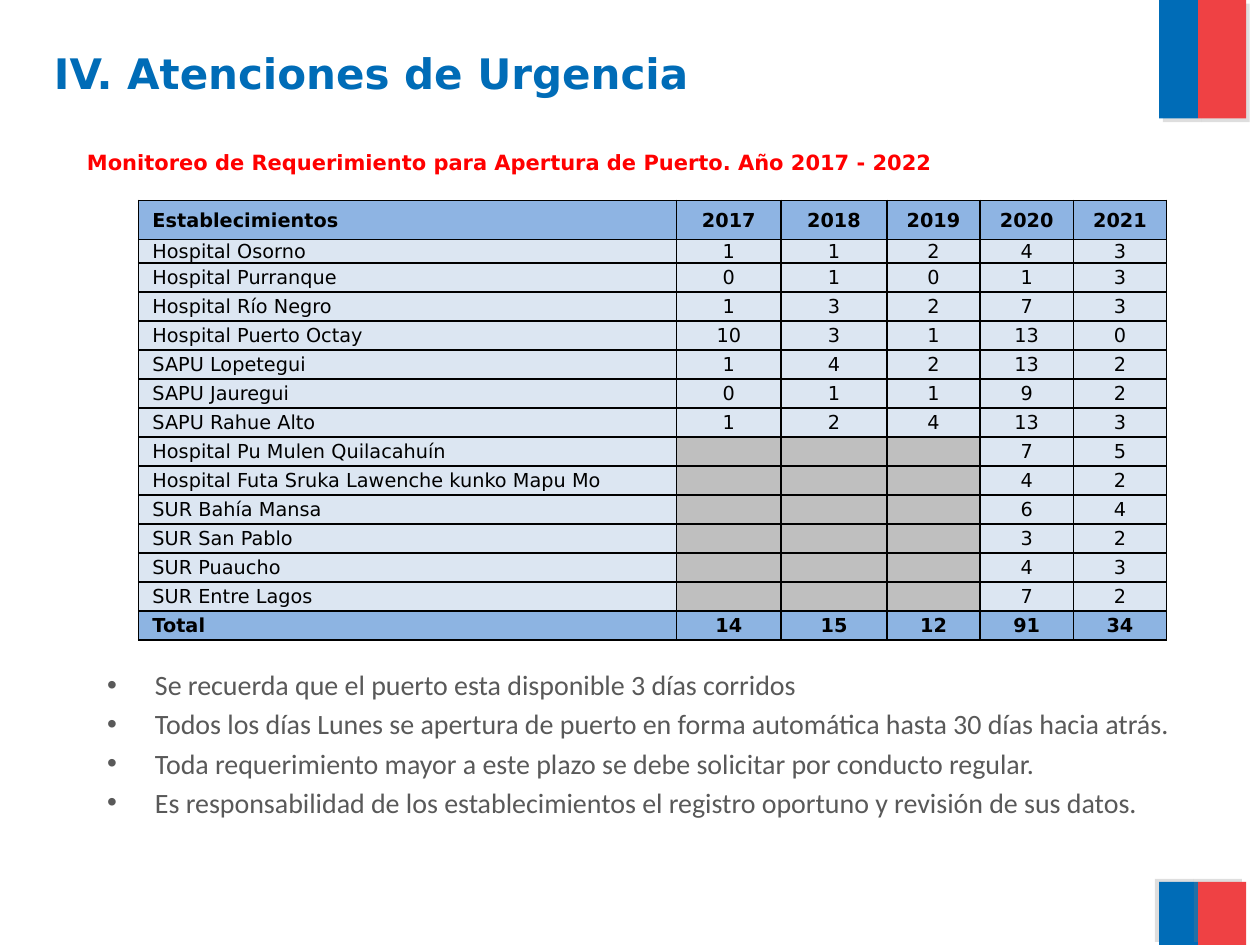
from lxml import etree
from pptx import Presentation
from pptx.dml.color import RGBColor
from pptx.enum.shapes import MSO_SHAPE
from pptx.enum.text import MSO_ANCHOR, PP_ALIGN
from pptx.oxml import parse_xml
from pptx.oxml.ns import nsdecls, qn
from pptx.util import Inches, Pt

RECTANGLE = MSO_SHAPE.RECTANGLE
TOP, MIDDLE = MSO_ANCHOR.TOP, MSO_ANCHOR.MIDDLE
LEFT, CENTER = PP_ALIGN.LEFT, PP_ALIGN.CENTER

BLUE = RGBColor(0x00, 0x6C, 0xB7)
FLAG_RED = RGBColor(0xEF, 0x41, 0x44)
TITLE_RED = RGBColor(0xFF, 0x00, 0x00)
BLACK = RGBColor(0x00, 0x00, 0x00)
TEXT_GRAY = RGBColor(0x59, 0x59, 0x59)
HEADER_BLUE = RGBColor(0x8E, 0xB4, 0xE3)
TOTAL_BLUE = RGBColor(0x8D, 0xB4, 0xE2)
ROW_BLUE = RGBColor(0xDC, 0xE6, 0xF2)
NO_DATA_GRAY = RGBColor(0xBF, 0xBF, 0xBF)

TABLE_FONT = "DejaVu Sans"
BODY_FONT = "Calibri"

COLUMN_WIDTHS = (4.27, 0.83, 0.84, 0.74, 0.74, 0.74)
HEADER_HEIGHT, FIRST_ROW_HEIGHT, ROW_HEIGHT = 0.31, 0.16, 0.23
ROWS = (
    ("Establecimientos", "2017", "2018", "2019", "2020", "2021"),
    ("Hospital Osorno", "1", "1", "2", "4", "3"),
    ("Hospital Purranque", "0", "1", "0", "1", "3"),
    ("Hospital Río Negro", "1", "3", "2", "7", "3"),
    ("Hospital Puerto Octay", "10", "3", "1", "13", "0"),
    ("SAPU Lopetegui", "1", "4", "2", "13", "2"),
    ("SAPU Jauregui", "0", "1", "1", "9", "2"),
    ("SAPU Rahue Alto", "1", "2", "4", "13", "3"),
    ("Hospital Pu Mulen Quilacahuín", "", "", "", "7", "5"),
    ("Hospital Futa Sruka Lawenche kunko Mapu Mo", "", "", "", "4", "2"),
    ("SUR Bahía Mansa", "", "", "", "6", "4"),
    ("SUR San Pablo", "", "", "", "3", "2"),
    ("SUR Puaucho", "", "", "", "4", "3"),
    ("SUR Entre Lagos", "", "", "", "7", "2"),
    ("Total", "14", "15", "12", "91", "34"),
)
REMINDERS = (
    "Se recuerda que el puerto esta disponible 3 días corridos",
    "Todos los días Lunes se apertura de puerto en forma automática hasta 30 días hacia atrás.",
    "Toda requerimiento mayor a este plazo se debe solicitar por conducto regular.",
    "Es responsabilidad de los establecimientos el registro oportuno y revisión de sus datos.",
)


def place(shape, left, top, width, height):
    """Move and size a shape, in inches."""
    shape.left, shape.top = Inches(left), Inches(top)
    shape.width, shape.height = Inches(width), Inches(height)


def format_paragraph(paragraph, name, size, color, bold=False, alignment=LEFT):
    """Set the font and alignment of a paragraph."""
    font = paragraph.font
    font.name, font.size, font.bold = name, Pt(size), bold
    font.color.rgb = color
    paragraph.alignment = alignment


def add_shadow(shape, direction):
    """Give a shape a soft gray shadow towards a direction in degrees."""
    shape.shadow.inherit = False
    effects = shape._element.spPr.find(qn("a:effectLst"))
    effects.append(parse_xml(
        f'<a:outerShdw {nsdecls("a")} blurRad="0" dist="{Pt(3)}" dir="{direction * 60000}">'
        '<a:srgbClr val="808080"><a:alpha val="25000"/></a:srgbClr></a:outerShdw>'))


def add_flag(slide, left, top, height, shadow_direction):
    """Draw the blue and red flag band."""
    for offset, width, color in ((0, 0.31, BLUE), (0.31, 0.38, FLAG_RED)):
        stripe = slide.shapes.add_shape(
            RECTANGLE, Inches(left + offset), Inches(top), Inches(width), Inches(height))
        stripe.fill.solid()
        stripe.fill.fore_color.rgb = color
        stripe.line.fill.background()
        add_shadow(stripe, shadow_direction)


def add_heading(slide, left, top, width, height):
    """Write the section heading."""
    heading = slide.shapes.add_textbox(
        Inches(left), Inches(top), Inches(width), Inches(height))
    heading.text_frame.word_wrap = True
    heading.text_frame.text = "IV. Atenciones de Urgencia"
    format_paragraph(heading.text_frame.paragraphs[0], TABLE_FONT, 24, BLUE, bold=True)


def fill_title(slide, left, top, width, height):
    """Write the table title in the title placeholder."""
    title = slide.shapes.title
    place(title, left, top, width, height)
    title.text_frame.text = "Monitoreo de Requerimiento para Apertura de Puerto. Año 2017 - 2022"
    title.text_frame.vertical_anchor = TOP
    format_paragraph(title.text_frame.paragraphs[0], TABLE_FONT, 12, TITLE_RED, bold=True)


def add_borders(cell):
    """Draw a thin black line on each side of a cell."""
    properties = cell._tc.get_or_add_tcPr()
    for side in ("lnL", "lnR", "lnT", "lnB"):
        line = etree.SubElement(properties, qn(f"a:{side}"), w=str(Pt(1)))
        fill = etree.SubElement(line, qn("a:solidFill"))
        etree.SubElement(fill, qn("a:srgbClr"), val=str(BLACK))


def fill_cell(cell, text, color, bold, is_label):
    """Write and format one table cell."""
    add_borders(cell)
    cell.fill.solid()
    cell.fill.fore_color.rgb = color
    cell.vertical_anchor = MIDDLE
    cell.margin_left = Inches(0.11 if is_label else 0.01)
    cell.margin_right = cell.margin_top = Inches(0.01)
    cell.margin_bottom = 0
    cell.text = text
    format_paragraph(cell.text_frame.paragraphs[0], TABLE_FONT, 11, BLACK, bold,
                     LEFT if is_label else CENTER)


def add_request_table(slide, left, top):
    """Build the table of requests by establishment and year."""
    heights = [HEADER_HEIGHT, FIRST_ROW_HEIGHT] + [ROW_HEIGHT] * (len(ROWS) - 2)
    table = slide.shapes.add_table(
        len(ROWS), len(COLUMN_WIDTHS), Inches(left), Inches(top),
        Inches(sum(COLUMN_WIDTHS)), Inches(sum(heights))).table
    table.first_row = table.horz_banding = False
    for column, width in zip(table.columns, COLUMN_WIDTHS):
        column.width = Inches(width)
    band_colors = {0: HEADER_BLUE, len(ROWS) - 1: TOTAL_BLUE}
    for row_index, values in enumerate(ROWS):
        table.rows[row_index].height = Inches(heights[row_index])
        row_color = band_colors.get(row_index, ROW_BLUE)
        for column_index, text in enumerate(values):
            fill_cell(table.cell(row_index, column_index), text,
                      row_color if text else NO_DATA_GRAY,
                      row_index in band_colors, column_index == 0)


def fill_reminders(slide, left, top, width, height):
    """List the reminders in the body placeholder."""
    body = slide.placeholders[1]
    place(body, left, top, width, height)
    body.text_frame.text = "\n".join(REMINDERS)
    for paragraph in body.text_frame.paragraphs:
        format_paragraph(paragraph, BODY_FONT, 16, TEXT_GRAY)
        properties = paragraph._p.get_or_add_pPr()
        properties.set("marL", str(Inches(0.38)))
        properties.set("indent", str(Inches(-0.38)))


def main():
    """Build the slide and save it."""
    presentation = Presentation()
    presentation.slide_width, presentation.slide_height = Inches(10), Inches(7.5)
    slide = presentation.slides.add_slide(presentation.slide_layouts[1])
    add_flag(slide, 9.2, 0, 0.94, 45)
    add_flag(slide, 9.2, 7, 0.5, 215)
    fill_title(slide, 0.59, 1.14, 8.27, 0.66)
    fill_reminders(slide, 0.75, 5.25, 8.94, 1.57)
    add_request_table(slide, 1.1, 1.59)
    add_heading(slide, 0.33, 0.33, 8.93, 0.58)
    presentation.save("out.pptx")


if __name__ == "__main__":
    main()
